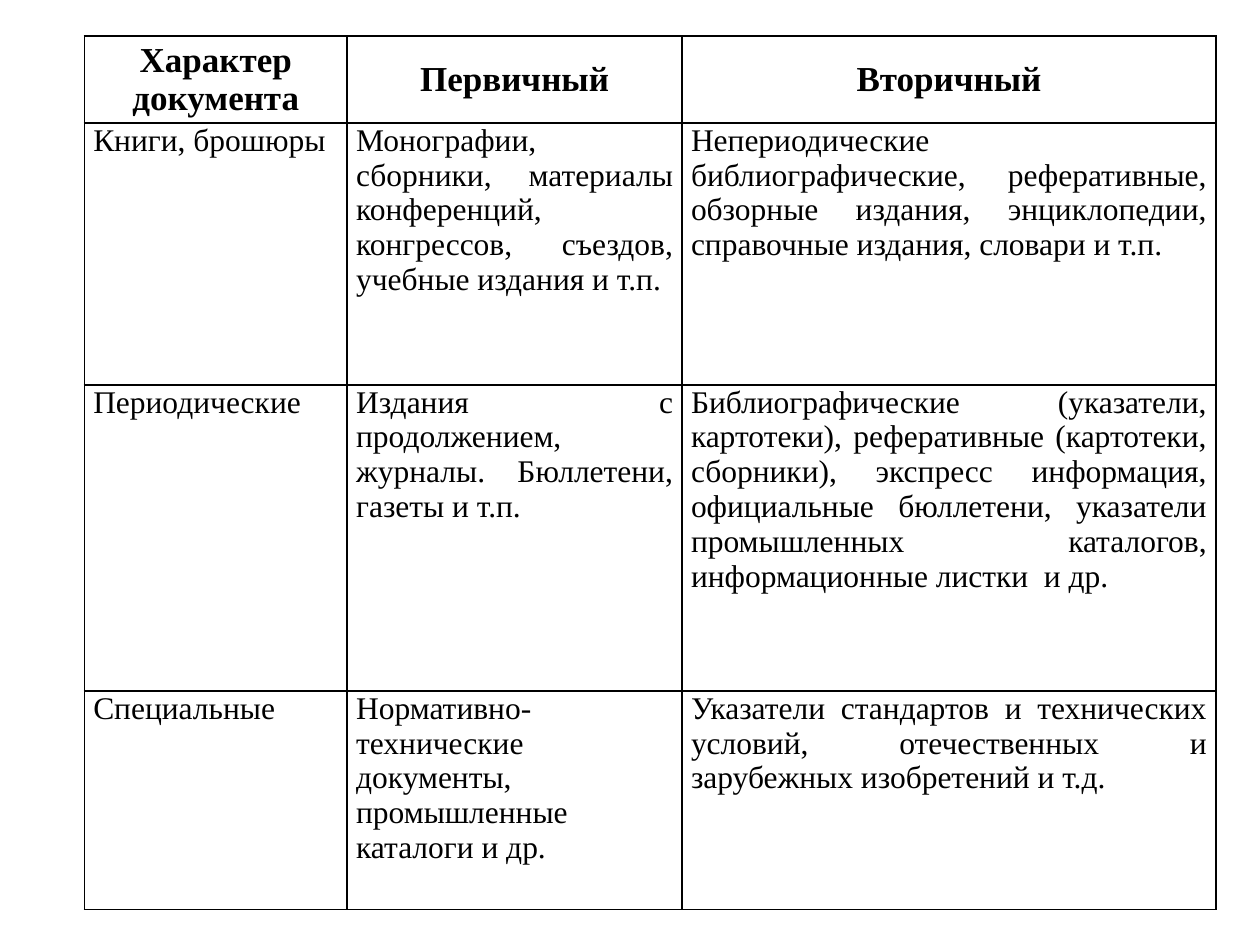
from lxml import etree
from pptx import Presentation
from pptx.dml.color import RGBColor
from pptx.enum.text import MSO_ANCHOR, PP_ALIGN
from pptx.oxml.ns import qn
from pptx.util import Cm, Pt

BLACK = RGBColor(0x00, 0x00, 0x00)
FONT_NAME = "Times New Roman"
CENTER, JUSTIFY = PP_ALIGN.CENTER, PP_ALIGN.JUSTIFY
MIDDLE, TOP = MSO_ANCHOR.MIDDLE, MSO_ANCHOR.TOP

COLUMN_WIDTHS = [5.3, 6.75, 10.76]
ROW_HEIGHTS = [1.75, 5.28, 6.17, 4.4]

# A line break inside a cell separates paragraphs.
DOCUMENT_TYPES = [
    ["Характер документа", "Первичный", "Вторичный"],
    [
        "Книги, брошюры",
        "Монографии, сборники, материалы конференций, конгрессов, съездов, "
        "учебные издания и т.п.",
        "Непериодические библиографические, реферативные, обзорные издания, "
        "энциклопедии, справочные издания, словари и т.п.",
    ],
    [
        "Периодические",
        "Издания с продолжением, журналы. Бюллетени, газеты и т.п.",
        "Библиографические (указатели, картотеки), реферативные (картотеки, "
        "сборники), экспресс информация, официальные бюллетени, указатели "
        "промышленных каталогов, информационные листки  и др.",
    ],
    [
        "Специальные",
        "Нормативно-технические\nдокументы, промышленные каталоги и др.",
        "Указатели стандартов и технических условий, отечественных и "
        "зарубежных изобретений и т.д.",
    ],
]


def add_borders(cell):
    properties = cell._tc.get_or_add_tcPr()
    for position, side in enumerate(("lnL", "lnR", "lnT", "lnB")):
        line = etree.Element(qn(f"a:{side}"), w=str(Pt(1)))
        fill = etree.SubElement(line, qn("a:solidFill"))
        etree.SubElement(fill, qn("a:srgbClr"), val=str(BLACK))
        properties.insert(position, line)


def fill_cell(cell, text, is_header):
    cell.margin_left = cell.margin_right = Cm(0.18)
    cell.margin_top = cell.margin_bottom = 0
    cell.vertical_anchor = MIDDLE if is_header else TOP
    cell.fill.background()
    add_borders(cell)

    frame = cell.text_frame
    for index, line in enumerate(text.split("\n")):
        paragraph = frame.add_paragraph() if index else frame.paragraphs[0]
        paragraph.alignment = CENTER if is_header else JUSTIFY
        run = paragraph.add_run()
        run.text = line
        run.font.name = FONT_NAME
        run.font.size = Pt(20 if is_header else 18)
        run.font.bold = is_header
        run.font.color.rgb = BLACK


def add_document_table(slide):
    table = slide.shapes.add_table(
        len(ROW_HEIGHTS), len(COLUMN_WIDTHS), Cm(1.7), Cm(0.73),
        Cm(sum(COLUMN_WIDTHS)), Cm(sum(ROW_HEIGHTS)),
    ).table
    table.horz_banding = False
    table.first_row = False
    for column, width in zip(table.columns, COLUMN_WIDTHS):
        column.width = Cm(width)
    for row_index, (row, height) in enumerate(zip(table.rows, ROW_HEIGHTS)):
        row.height = Cm(height)
        for cell, text in zip(row.cells, DOCUMENT_TYPES[row_index]):
            fill_cell(cell, text, is_header=row_index == 0)


def main():
    presentation = Presentation()
    presentation.slide_width = Cm(25.4)
    presentation.slide_height = Cm(19.05)
    slide = presentation.slides.add_slide(presentation.slide_layouts[6])
    add_document_table(slide)
    presentation.save("out.pptx")


if __name__ == "__main__":
    main()
